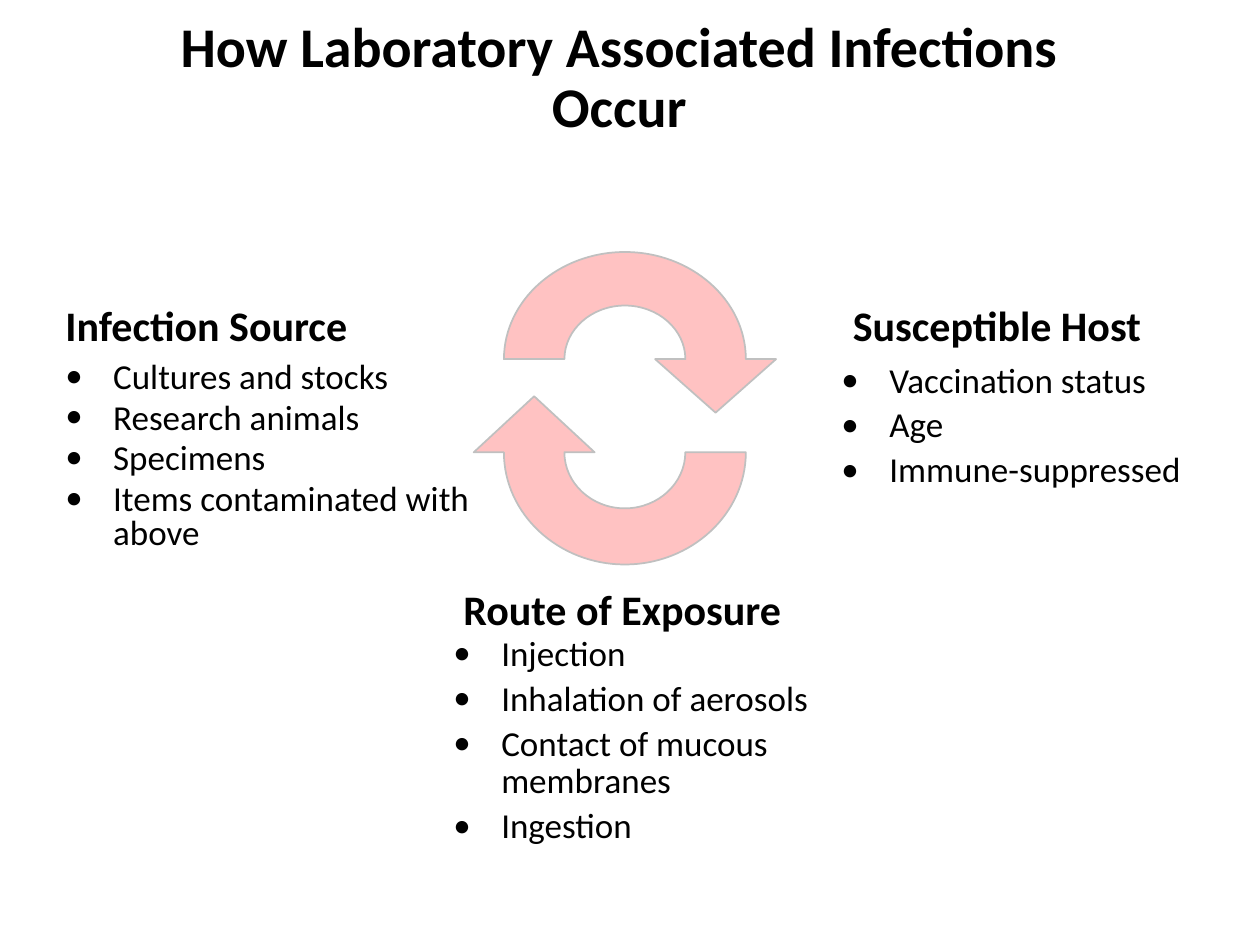
from lxml.etree import SubElement
from pptx import Presentation
from pptx.dml.color import RGBColor
from pptx.enum.text import MSO_ANCHOR, PP_ALIGN
from pptx.oxml.ns import qn
from pptx.util import Inches, Pt

BLACK, RED, SILVER = "000000", "FF0000", "C0C0C0"
TITLE = {"size": Pt(32), "bold": True}
HEAD = {"size": Pt(24), "bold": True}
ITEM = {"size": Pt(20), "bold": False}
ROUND = 0.55


def color(code):
    return RGBColor.from_string(code)


def add_text(slide, box, lines, font, layout=None):
    """Place lines as paragraphs in box, and return the text frame."""
    frame = slide.shapes.add_textbox(*map(Inches, box)).text_frame
    frame.word_wrap = True
    frame.text = "\n".join(lines)
    for para in frame.paragraphs:
        for name, value in (layout or {}).items():
            setattr(para, name, value)
        for run in para.runs:
            for name, value in {"name": "Calibri", **font}.items():
                setattr(run.font, name, value)
            run.font.color.rgb = color(BLACK)
    return frame


def add_title(slide, box, text):
    layout = {"alignment": PP_ALIGN.CENTER, "line_spacing": 0.9}
    frame = add_text(slide, box, [text], TITLE, layout)
    frame.vertical_anchor = MSO_ANCHOR.MIDDLE


def add_list(slide, box, items, spacing):
    layout = {"line_spacing": spacing, "space_before": Pt(4)}
    frame = add_text(slide, box, items, ITEM, layout)
    for para in frame.paragraphs:
        props = para._p.get_or_add_pPr()
        props.set("marL", str(Inches(0.38)))
        props.set("indent", str(-Inches(0.38)))
        SubElement(props, qn("a:buFont"), typeface="Calibri")
        SubElement(props, qn("a:buChar"), char="•")


def bend(line, upright):
    """Turn a straight path segment into a quarter of an ellipse."""
    def spot(node):
        mark = node.findall(qn("a:pt"))[-1]
        return int(mark.get("x")), int(mark.get("y"))

    start, end = spot(line.getprevious()), spot(line)
    corner = (start[0], end[1]) if upright else (end[0], start[1])
    curve = line.makeelement(qn("a:cubicBezTo"), {})
    for base, pull in ((start, ROUND), (end, ROUND), (end, 0)):
        x, y = (round(b + pull * (c - b)) for b, c in zip(base, corner))
        SubElement(curve, qn("a:pt"), x=str(x), y=str(y))
    line.getparent().replace(line, curve)


def add_arrow(shapes, center, radii, turn):
    """Draw a half-ring arrow; turn is 1 for the upper half, -1 for the lower."""
    (x, y), (wide, high) = center, radii
    marks = [(0.5, 0), (0, 0.5), (-0.5, 0), (-1, 0), (0, 1), (1, 0),
             (1.25, 0), (0.75, -0.5), (0.25, 0)]
    points = [(Inches(x + turn * wide * a), Inches(y - turn * high * b))
              for a, b in marks]
    build = shapes.build_freeform(*points[0])
    build.add_line_segments(points[1:], close=True)
    shape = build.convert_to_shape()
    lines = list(shape._element.iter(qn("a:lnTo")))
    for index, upright in ((0, True), (1, False), (3, True), (4, False)):
        bend(lines[index], upright)
    shape.shadow.inherit = False
    shape.fill.solid()
    shape.fill.fore_color.rgb = color(RED)
    tint = shape.fill._xPr.find(qn("a:solidFill"))[0]
    SubElement(tint, qn("a:alpha"), val="24000")
    shape.line.color.rgb = color(SILVER)
    shape.line.width = Pt(1)


def add_cycle(slide, box):
    left, top, width, height = box
    mid, wide = left + width / 2, width / 2
    upper, lower = 0.85, 0.89
    shapes = slide.shapes.add_group_shape().shapes
    add_arrow(shapes, (mid, top + upper), (wide, upper), 1)
    add_arrow(shapes, (mid, top + height - lower), (wide, lower), -1)


def main():
    deck = Presentation()
    deck.slide_width, deck.slide_height = Inches(10), Inches(7.5)
    slide = deck.slides.add_slide(deck.slide_layouts[6])
    add_title(slide, (1, 0.1, 7.83, 1.06),
              "How Laboratory Associated Infections Occur")
    add_cycle(slide, (4, 2, 1.92, 2.48))
    groups = [
        ("Route of Exposure", (3.58, 4.58, 3.5, 0.5),
         ["Injection", "Inhalation of aerosols",
          "Contact of mucous membranes", "Ingestion"],
         (3.5, 5, 4.08, 1.33), 0.9),
        ("Susceptible Host", (6.67, 2.33, 2.76, 0.5),
         ["Vaccination status", "Age", "Immune-suppressed"],
         (6.58, 2.83, 3.08, 1.25), 0.9),
        ("Infection Source", (0.42, 2.33, 2.99, 0.5),
         ["Cultures and stocks", "Research animals", "Specimens",
          "Items contaminated with above"],
         (0.42, 2.83, 3.5, 1.42), 0.8),
    ]
    for head, place, items, box, spacing in groups:
        add_text(slide, place, [head], HEAD)
        add_list(slide, box, items, spacing)
    deck.save("out.pptx")


if __name__ == "__main__":
    main()
